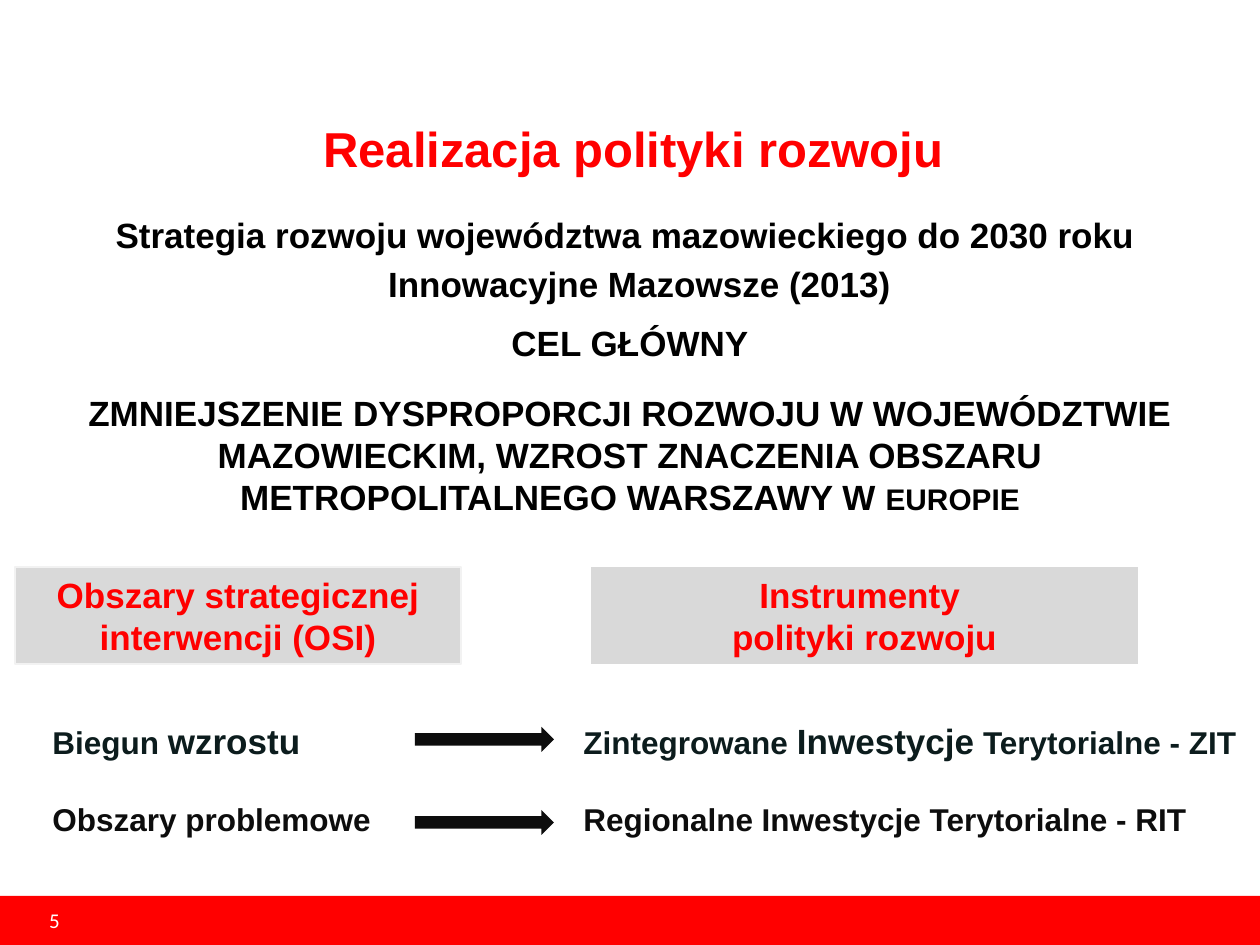
from dataclasses import dataclass
from pptx import Presentation
from pptx.dml.color import RGBColor
from pptx.enum.shapes import MSO_SHAPE
from pptx.enum.text import MSO_ANCHOR, PP_ALIGN
from pptx.util import Pt


@dataclass(frozen=True)
class Theme:
    red: str = "FF0000"
    white: str = "FFFFFF"
    black: str = "000000"
    teal: str = "0C1C1D"
    ink: str = "0D0D0D"
    grey: str = "D9D9D9"
    edge: str = "F2F2F2"
    title: int = 28
    main: int = 20
    item: int = 18
    small: int = 17
    page: int = 12


T = Theme()

# Content: each line is a list of (text, size) runs
TITLE = "Realizacja polityki rozwoju "
GOAL = [  # runs, space before, space after (pt), left indent (px)
    ([("Strategia rozwoju województwa mazowieckiego do 2030 roku ", T.main)], 0, 2, 0),
    ([("Innowacyjne Mazowsze (2013)", T.main)], 2, 2, 19),
    ([("CEL GŁÓWNY", T.main)], 8, 8, 0),
    ([("ZMNIEJSZENIE DYSPROPORCJI ROZWOJU W WOJEWÓDZTWIE MAZOWIECKIM, "
       "WZROST ZNACZENIA OBSZARU METROPOLITALNEGO WARSZAWY W ", T.main),
      ("EUROPIE", T.small)], 8, 8, 0),
]
HEADS = [  # text, left, width, edge colour
    ("Obszary strategicznej interwencji (OSI)", 15, 446, T.edge),
    ("Instrumenty \vpolityki rozwoju", 591, 547, None),
]
COLS = [  # left, width, lines
    (40, 445, [[("Biegun ", T.item), ("wzrostu", T.main)],
               [("Obszary problemowe", T.item)]]),
    (571, 684, [[("Zintegrowane ", T.item), ("Inwestycje", T.main),
                 (" Terytorialne - ZIT", T.item)],
                [("Regionalne Inwestycje Terytorialne - RIT", T.item)]]),
]
ARROWS = [727, 810]
PAGE = "5"

PX = 914400 / 126


def px(n):
    return round(n * PX)


deck = Presentation()
deck.slide_width, deck.slide_height = px(1260), px(945)
slide = deck.slides.add_slide(deck.slide_layouts[6])


def block(kind, box, fill, edge=None):
    shape = slide.shapes.add_shape(kind, *map(px, box))
    shape.shadow.inherit = False
    shape.fill.solid()
    shape.fill.fore_color.rgb = RGBColor.from_string(fill)
    if edge:
        shape.line.color.rgb = RGBColor.from_string(edge)
        shape.line.width = Pt(0.75)
    else:
        shape.line.fill.background()
    return shape


def label(box, anchor=MSO_ANCHOR.TOP):
    frame = slide.shapes.add_textbox(*map(px, box)).text_frame
    frame.word_wrap = True
    frame.vertical_anchor = anchor
    return frame


def write(frame, row, runs, color, align=PP_ALIGN.CENTER, face="Arial", bold=True):
    para = frame.paragraphs[0] if row == 0 else frame.add_paragraph()
    para.alignment = align
    sizes = {size for _, size in runs}
    for text, size in runs:
        # add_line_break keeps a two-line heading in one paragraph
        for n, part in enumerate(text.split("\v")):
            if n:
                para.add_line_break()
            run = para.add_run()
            run.text = part
            if len(sizes) > 1:
                run.font.size = Pt(size)
    font = para.font
    font.name, font.bold = face, bold
    font.size = Pt(runs[0][1])
    font.color.rgb = RGBColor.from_string(color)
    return para


# Footer band and page number
block(MSO_SHAPE.RECTANGLE, (0, 896, 1260, 49), T.red)
foot = label((49, 896, 59, 49), MSO_ANCHOR.MIDDLE)
foot.margin_left = foot.margin_right = foot.margin_top = foot.margin_bottom = 0
write(foot, 0, [(PAGE, T.page)], T.white, PP_ALIGN.LEFT, "Calibri", False)

# Title and main goal
write(label((25, 107, 1230, 81), MSO_ANCHOR.MIDDLE), 0, [(TITLE, T.title)], T.red)
goal = label((15, 207, 1230, 287))
for row, (runs, above, below, left) in enumerate(GOAL):
    para = write(goal, row, runs, T.black)
    para.space_after = Pt(below)
    if above:
        para.space_before = Pt(above)
    if left:
        para._p.get_or_add_pPr().set("marL", str(px(left)))

# Column headings
for text, left, width, edge in HEADS:
    head = block(MSO_SHAPE.RECTANGLE, (left, 567, width, 97), T.grey, edge).text_frame
    head.word_wrap = True
    write(head, 0, [(text, T.main)], T.red)

# Areas, instruments and the arrows between them
for left, width, lines in COLS:
    col = label((left, 713, width, 131))
    for row, runs in enumerate(lines):
        para = write(col, row, runs, (T.teal, T.ink)[row], PP_ALIGN.LEFT)
        if row:
            para.space_before = Pt(22)
for top in ARROWS:
    block(MSO_SHAPE.RIGHT_ARROW, (415, top, 139, 25), T.ink)

deck.save("out.pptx")
